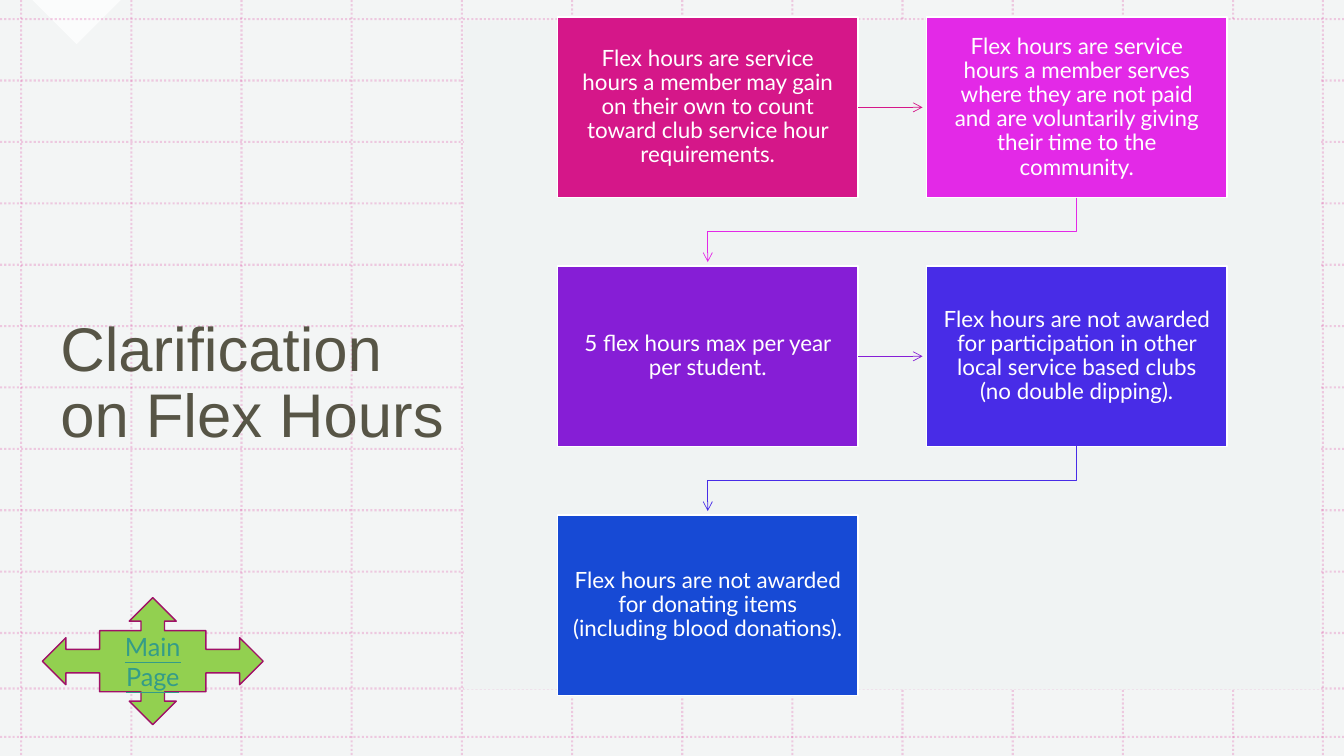
from dataclasses import dataclass

from lxml.etree import SubElement
from pptx import Presentation
from pptx.dml.color import RGBColor
from pptx.enum.dml import MSO_LINE_DASH_STYLE as Dash
from pptx.enum.shapes import MSO_CONNECTOR_TYPE as Connector
from pptx.enum.shapes import MSO_SHAPE as Preset
from pptx.enum.text import MSO_ANCHOR as Anchor
from pptx.enum.text import PP_ALIGN as Align
from pptx.oxml.ns import qn
from pptx.util import Inches, Pt

WIDTH, HEIGHT = 13.33, 7.5
PALE, WHITE, PINK = "F0F3F3", "FFFFFF", "D51789"

BOX_WIDTH, BOX_HEIGHT = 2.98, 1.79
BOX_LEFT, BOX_TOP = 5.53, 0.17
COLUMN_STEP, ROW_STEP = 3.66, 2.47
ARROW_GAP = 0.04


@dataclass(frozen=True)
class Step:
    text: str
    color: str
    column: int
    row: int

    @property
    def left(self) -> float:
        return BOX_LEFT + self.column * COLUMN_STEP

    @property
    def top(self) -> float:
        return BOX_TOP + self.row * ROW_STEP

    @property
    def center(self) -> float:
        return self.left + BOX_WIDTH / 2

    @property
    def middle(self) -> float:
        return self.top + BOX_HEIGHT / 2


STEPS = [
    Step("Flex hours are service hours a member may gain on their own to count "
         "toward club service hour requirements.", PINK, 0, 0),
    Step("Flex hours are service hours a member serves where they are not paid "
         "and are voluntarily giving their time to the community.", "E329E7", 1, 0),
    Step("5 flex hours max per year per student.", "861ED6", 0, 1),
    Step("Flex hours are not awarded for participation in other local service "
         "based clubs (no double dipping).", "482CE7", 1, 1),
    Step("Flex hours are not awarded for donating items (including blood "
         "donations).", "174AD5", 0, 2),
]


def rgb(color: str) -> RGBColor:
    return RGBColor.from_string(color)


def set_opacity(element, percent: int) -> None:
    """Apply the opacity to every colour inside the element."""
    for color in list(element.iter(qn("a:srgbClr"))):
        SubElement(color, qn("a:alpha"), val=str(percent * 1000))


def add_line(page, x1: float, y1: float, x2: float, y2: float, color: str, weight: float):
    line = page.shapes.add_connector(
        Connector.STRAIGHT, Inches(x1), Inches(y1), Inches(x2), Inches(y2))
    line.line.color.rgb = rgb(color)
    line.line.width = Pt(weight)
    SubElement(line._element.spPr, qn("a:effectLst"))
    return line


def add_arrowhead(shape) -> None:
    SubElement(shape.line._get_or_add_ln(), qn("a:tailEnd"), type="arrow")


def add_box(page, preset, left: float, top: float, width: float, height: float,
            fill: str, outline: str = ""):
    box = page.shapes.add_shape(
        preset, Inches(left), Inches(top), Inches(width), Inches(height))
    box.shadow.inherit = False
    box.fill.solid()
    box.fill.fore_color.rgb = rgb(fill)
    if outline:
        box.line.color.rgb = rgb(outline)
        box.line.width = Pt(1)
    else:
        box.line.fill.background()
    return box


def write(box, text: str, font: str, size: int, color: str, align, spacing: float = 1.0):
    frame = box.text_frame
    frame.word_wrap = True
    frame.vertical_anchor = Anchor.MIDDLE
    frame.text = text
    para = frame.paragraphs[0]
    para.alignment = align
    para.line_spacing = spacing
    run = para.runs[0]
    run.font.name = font
    run.font.size = Pt(size)
    run.font.color.rgb = rgb(color)
    return run


def add_grid(page) -> None:
    columns = [0.21 + 12.02 * index / 11 for index in range(12)] + [13.12]
    rows = [0.19 + 6.09 * index / 10 for index in range(11)] + [6.83, 7.31]
    ends = [(x, 0, x, HEIGHT) for x in columns] + [(0, y, WIDTH, y) for y in rows]
    for x1, y1, x2, y2 in ends:
        line = add_line(page, x1, y1, x2, y2, PINK, 1.5)
        line.line.dash_style = Dash.ROUND_DOT
        set_opacity(line._element.spPr, 20)


def add_step(page, step: Step) -> None:
    box = add_box(page, Preset.RECTANGLE, step.left, step.top, BOX_WIDTH, BOX_HEIGHT,
                  step.color, WHITE)
    frame = box.text_frame
    frame.margin_left = frame.margin_right = Inches(0.15)
    frame.margin_top = frame.margin_bottom = Inches(0.15)
    write(box, step.text, "Lato", 16, WHITE, Align.CENTER, 0.9)


def add_arrow(page, start: Step, end: Step) -> None:
    """Point straight along a row, or with two bends down to the next row."""
    if start.row == end.row:
        arrow = add_line(page, start.left + BOX_WIDTH, start.middle,
                         end.left - ARROW_GAP, end.middle, start.color, 0.5)
    else:
        bottom = start.top + BOX_HEIGHT
        bend = (bottom + end.top) / 2
        corners = [(start.center, bend), (end.center, bend),
                   (end.center, end.top - ARROW_GAP)]
        builder = page.shapes.build_freeform(Inches(start.center), Inches(bottom))
        builder.add_line_segments(
            [(Inches(x), Inches(y)) for x, y in corners], close=False)
        arrow = builder.convert_to_shape()
        arrow.shadow.inherit = False
        arrow.fill.background()
        arrow.line.color.rgb = rgb(start.color)
        arrow.line.width = Pt(0.5)
    add_arrowhead(arrow)


def main() -> None:
    deck = Presentation()
    deck.slide_width, deck.slide_height = Inches(WIDTH), Inches(HEIGHT)
    page = deck.slides.add_slide(deck.slide_layouts[6])
    page.background.fill.solid()
    page.background.fill.fore_color.rgb = rgb("F3F5F5")

    corner = add_box(page, Preset.RIGHT_TRIANGLE, 0.45, -0.31, 0.62, 0.62, WHITE)
    corner.rotation = 315
    set_opacity(corner._element.spPr, 75)
    add_grid(page)

    title = page.shapes.add_textbox(Inches(0.5), Inches(0.79), Inches(4.07), Inches(6.05))
    write(title, "Clarification on Flex Hours", "Arial", 44, "302E1B", Align.LEFT, 0.9)
    set_opacity(title._element.txBody, 80)

    add_box(page, Preset.RECTANGLE, 4.6, 0.21, 8.49, 6.63, PALE)
    for step in STEPS:
        add_step(page, step)
    for start, end in zip(STEPS, STEPS[1:]):
        add_arrow(page, start, end)

    button = add_box(page, Preset.QUAD_ARROW_CALLOUT, 0.42, 5.93, 2.19, 1.26,
                     "92D050", "A01167")
    label = write(button, "Main Page", "Lato", 18, "349C88", Align.CENTER)
    label.font.underline = True

    deck.save("out.pptx")


if __name__ == "__main__":
    main()
